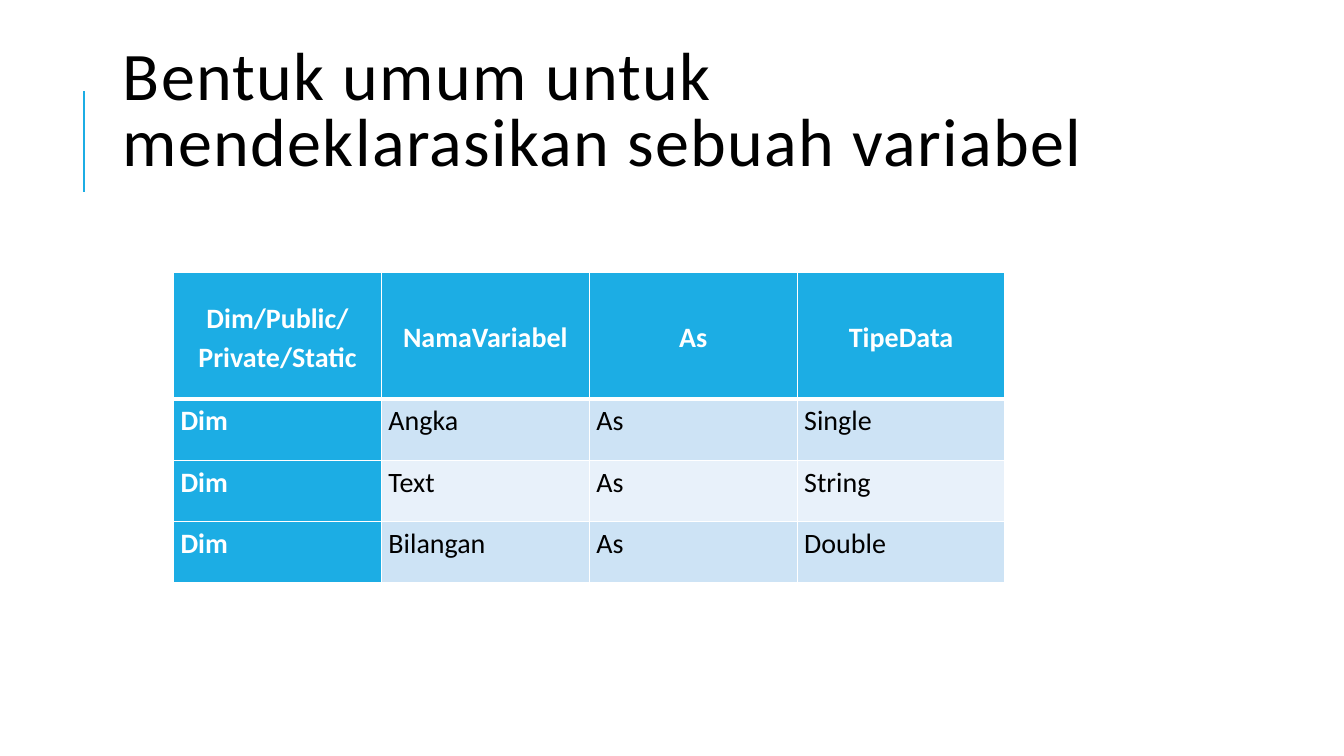
from lxml import etree
from pptx import Presentation
from pptx.dml.color import RGBColor
from pptx.enum.shapes import MSO_CONNECTOR
from pptx.enum.text import MSO_ANCHOR, PP_ALIGN
from pptx.oxml import parse_xml
from pptx.oxml.ns import nsdecls, qn
from pptx.util import Pt

FONT = "Calibri"
ACCENT = RGBColor(0x1C, 0xAD, 0xE4)
BAND_DARK = RGBColor(0xCD, 0xE3, 0xF5)
BAND_LIGHT = RGBColor(0xE8, 0xF1, 0xFA)
BLACK = RGBColor(0, 0, 0)
WHITE = RGBColor(0xFF, 0xFF, 0xFF)

TITLE = "Bentuk umum untuk mendeklarasikan sebuah variabel"
DECLARATIONS = [
    ["Dim/Public/Private/Static", "NamaVariabel", "As", "TipeData"],
    ["Dim", "Angka", "As", "Single"],
    ["Dim", "Text", "As", "String"],
    ["Dim", "Bilangan", "As", "Double"],
]
HEADER_HEIGHT = 90.4


def style_paragraph(paragraph, size, color, line_spacing, bold=False):
    paragraph.line_spacing = line_spacing
    font = paragraph.font
    font.name, font.size, font.bold = FONT, Pt(size), bold
    font.color.rgb = color
    return font


def add_title(slide, left, top, width, height):
    """Place the heading in its box, with the accent rule to its left."""
    rule_x, rule_top = Pt(left - 20.6), top + 42.4
    rule = slide.shapes.add_connector(
        MSO_CONNECTOR.STRAIGHT, rule_x, Pt(rule_top + 72), rule_x, Pt(rule_top))
    rule.line.color.rgb = ACCENT
    rule.line.width = Pt(1.5)
    etree.SubElement(rule._element.spPr, qn("a:effectLst"))

    heading = slide.shapes.add_textbox(Pt(left), Pt(top), Pt(width), Pt(height))
    frame = heading.text_frame
    frame.word_wrap = True
    frame.vertical_anchor = MSO_ANCHOR.MIDDLE
    frame.text = TITLE
    font = style_paragraph(frame.paragraphs[0], 48.6, BLACK, 0.8)
    font._rPr.set("spc", "100")


def add_borders(cell, top, bottom):
    """Draw white cell borders; top and bottom are widths in points."""
    for side, width in (("L", 1), ("R", 1), ("T", top), ("B", bottom)):
        cell._tc.get_or_add_tcPr().append(parse_xml(
            f'<a:ln{side} {nsdecls("a")} w="{Pt(width)}"><a:solidFill>'
            f'<a:srgbClr val="{WHITE}"/></a:solidFill></a:ln{side}>'))


def fill_cell(cell, text, row, column):
    is_header = row == 0
    is_strong = is_header or column == 0
    add_borders(cell, top=3 if row == 1 else 1, bottom=3 if is_header else 1)
    cell.fill.solid()
    band = BAND_DARK if row % 2 else BAND_LIGHT
    cell.fill.fore_color.rgb = ACCENT if is_strong else band
    cell.margin_left = cell.margin_right = Pt(5)
    cell.margin_top = cell.margin_bottom = 0
    cell.vertical_anchor = MSO_ANCHOR.MIDDLE if is_header else MSO_ANCHOR.TOP
    cell.text = text
    paragraph = cell.text_frame.paragraphs[0]
    paragraph.alignment = PP_ALIGN.CENTER if is_header else PP_ALIGN.JUSTIFY
    style_paragraph(paragraph, 20, WHITE if is_strong else BLACK, 1.15, is_strong)


def add_declaration_table(slide, left, top, width, height):
    row_count, column_count = len(DECLARATIONS), len(DECLARATIONS[0])
    table = slide.shapes.add_table(
        row_count, column_count, Pt(left), Pt(top), Pt(width), Pt(height)).table
    table.horz_banding = False
    for column in table.columns:
        column.width = Pt(width / column_count)
    body_height = (height - HEADER_HEIGHT) / (row_count - 1)
    for r, values in enumerate(DECLARATIONS):
        table.rows[r].height = Pt(body_height if r else HEADER_HEIGHT)
        for c, text in enumerate(values):
            fill_cell(table.cell(r, c), text, r, c)


def main():
    deck = Presentation()
    deck.slide_width, deck.slide_height = Pt(960), Pt(540)
    slide = deck.slides.add_slide(deck.slide_layouts[6])
    add_title(slide, 80.6, 22.4, 765.4, 118)
    add_declaration_table(slide, 124, 194.6, 594, 221.8)
    deck.save("out.pptx")


if __name__ == "__main__":
    main()
